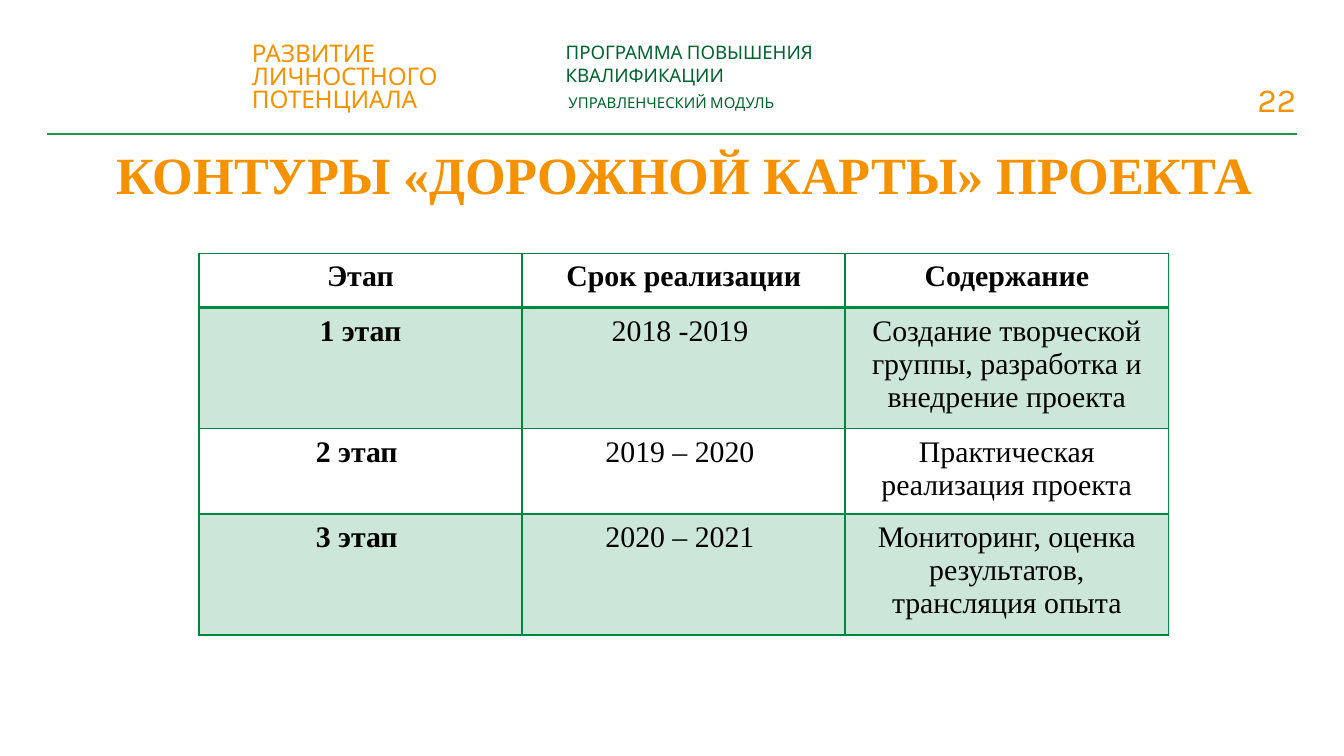
from dataclasses import dataclass

import pptx
import pptx.dml.color
import pptx.enum.shapes
import pptx.enum.text
import pptx.oxml
import pptx.oxml.ns
import pptx.oxml.xmlchemy
import pptx.presentation
import pptx.slide
import pptx.table
import pptx.text.text
import pptx.util

ALIGN = pptx.enum.text.PP_ALIGN
ANCHOR = pptx.enum.text.MSO_ANCHOR
EMU_PER_PX = 4572  # 200 px to the inch


@dataclass(frozen=True)
class Theme:
    orange: str = "F69200"
    dark_green: str = "00642D"
    rule_green: str = "22974F"
    table_green: str = "008841"
    black: str = "000000"
    header_font: str = "Karla"
    body_font: str = "Times New Roman"
    band_opacity: int = 20
    title_size: int = 28
    number_size: int = 18
    table_size: int = 16
    brand_size: int = 13
    program_size: int = 10
    module_size: int = 8


THEME = Theme()


@dataclass(frozen=True)
class Label:
    text: str
    left: int
    top: int
    width: int
    height: int
    size: int
    color: str
    font: str = THEME.header_font
    bold: bool = False
    align: ALIGN = ALIGN.LEFT
    anchor: ANCHOR = ANCHOR.TOP
    line_spacing: float = 1.0


@dataclass(frozen=True)
class Stage:
    name: str
    period: str
    content: str


LABELS = [
    Label("РАЗВИТИЕ ЛИЧНОСТНОГО ПОТЕНЦИАЛА", 375, 65, 454, 106,
          THEME.brand_size, THEME.orange, line_spacing=0.8),
    Label("ПРОГРАММА ПОВЫШЕНИЯ КВАЛИФИКАЦИИ", 842, 61, 468, 68,
          THEME.program_size, THEME.dark_green),
    Label("УПРАВЛЕНЧЕСКИЙ МОДУЛЬ", 846, 140, 340, 28,
          THEME.module_size, THEME.dark_green),
    Label("22", 1806, 118, 123, 46, THEME.number_size, THEME.orange, align=ALIGN.RIGHT),
    Label("КОНТУРЫ «ДОРОЖНОЙ КАРТЫ» ПРОЕКТА", 37, 182, 1962, 152,
          THEME.title_size, THEME.orange, THEME.body_font, True,
          ALIGN.CENTER, ANCHOR.MIDDLE),
]

STAGES = [
    Stage("Этап", "Срок реализации", "Содержание"),
    Stage("1 этап", "2018 -2019 ",
          "Создание творческой группы, разработка и внедрение проекта"),
    Stage("2 этап ", "2019 – 2020 ", "Практическая реализация проекта"),
    Stage("3 этап ", "2020 – 2021 ", "Мониторинг, оценка результатов, трансляция опыта"),
]
ROW_HEIGHTS = [81, 180, 127, 180]
COLUMN_WIDTH = 481


def px(length: int) -> pptx.util.Emu:
    return pptx.util.Emu(length * EMU_PER_PX)


def rgb(color: str) -> pptx.dml.color.RGBColor:
    return pptx.dml.color.RGBColor.from_string(color)


def add_child(parent: pptx.oxml.xmlchemy.BaseOxmlElement, tag: str,
              **attributes: str) -> pptx.oxml.xmlchemy.BaseOxmlElement:
    child = parent.makeelement(pptx.oxml.ns.qn(tag), attributes)
    parent.append(child)
    return child


def write_text(frame: pptx.text.text.TextFrame, text: str, font_name: str, size: int,
               color: str, bold: bool, align: ALIGN) -> None:
    paragraph = frame.paragraphs[0]
    paragraph.alignment = align
    run = paragraph.add_run()
    run.text = text
    values = {"name": font_name, "size": pptx.util.Pt(size), "bold": bold}
    for name, value in values.items():
        setattr(run.font, name, value)
    run.font.color.rgb = rgb(color)


def draw_label(slide: pptx.slide.Slide, label: Label) -> None:
    shape = slide.shapes.add_textbox(
        px(label.left), px(label.top), px(label.width), px(label.height))
    frame = shape.text_frame
    values = {"word_wrap": True, "vertical_anchor": label.anchor, "margin_left": 0,
              "margin_right": 0, "margin_top": 0, "margin_bottom": 0}
    for name, value in values.items():
        setattr(frame, name, value)
    write_text(frame, label.text, label.font, label.size, label.color,
               label.bold, label.align)
    frame.paragraphs[0].line_spacing = label.line_spacing


def draw_rule(slide: pptx.slide.Slide, left: int, right: int, top: int) -> None:
    connector = slide.shapes.add_connector(
        pptx.enum.shapes.MSO_CONNECTOR.STRAIGHT, px(left), px(top), px(right), px(top))
    connector.line.color.rgb = rgb(THEME.rule_green)
    connector.line.width = pptx.util.Pt(1)
    add_child(connector._element.spPr, "a:effectLst")


def style_cell(cell: pptx.table._Cell, row: int) -> None:
    # Borders, heavier between the header and the first stage
    properties = cell._tc.get_or_add_tcPr()
    widths = {"L": 1, "R": 1, "T": 2 if row == 1 else 1, "B": 2 if row == 0 else 1}
    for side, width in widths.items():
        line = add_child(properties, f"a:ln{side}", w=str(pptx.util.Pt(width)))
        fill = add_child(line, "a:solidFill")
        add_child(fill, "a:srgbClr", val=THEME.table_green)

    # Translucent band on odd rows
    if row % 2:
        cell.fill.solid()
        cell.fill.fore_color.rgb = rgb(THEME.table_green)
        color = properties.find(pptx.oxml.ns.qn("a:solidFill"))[0]
        add_child(color, "a:alpha", val=str(THEME.band_opacity * 1000))
    else:
        cell.fill.background()


def draw_stages(slide: pptx.slide.Slide, left: int, top: int) -> None:
    table = slide.shapes.add_table(
        len(STAGES), 3, px(left), px(top),
        px(3 * COLUMN_WIDTH), px(sum(ROW_HEIGHTS))).table
    for name in ("first_row", "horz_banding"):
        setattr(table, name, False)
    for column in table.columns:
        column.width = px(COLUMN_WIDTH)
    for row, (stage, height) in enumerate(zip(STAGES, ROW_HEIGHTS)):
        table.rows[row].height = px(height)
        for column, text in enumerate((stage.name, stage.period, stage.content)):
            cell = table.cell(row, column)
            style_cell(cell, row)
            write_text(cell.text_frame, text, THEME.body_font, THEME.table_size,
                       THEME.black, row == 0 or column == 0, ALIGN.CENTER)


def main() -> None:
    presentation = pptx.Presentation()
    presentation.slide_width, presentation.slide_height = px(2000), px(1125)
    slide = presentation.slides.add_slide(presentation.slide_layouts[6])

    # Header and title
    draw_rule(slide, 70, 1930, 200)
    for label in LABELS:
        draw_label(slide, label)

    # Project stages
    draw_stages(slide, 296, 377)
    presentation.save("out.pptx")


if __name__ == "__main__":
    main()
